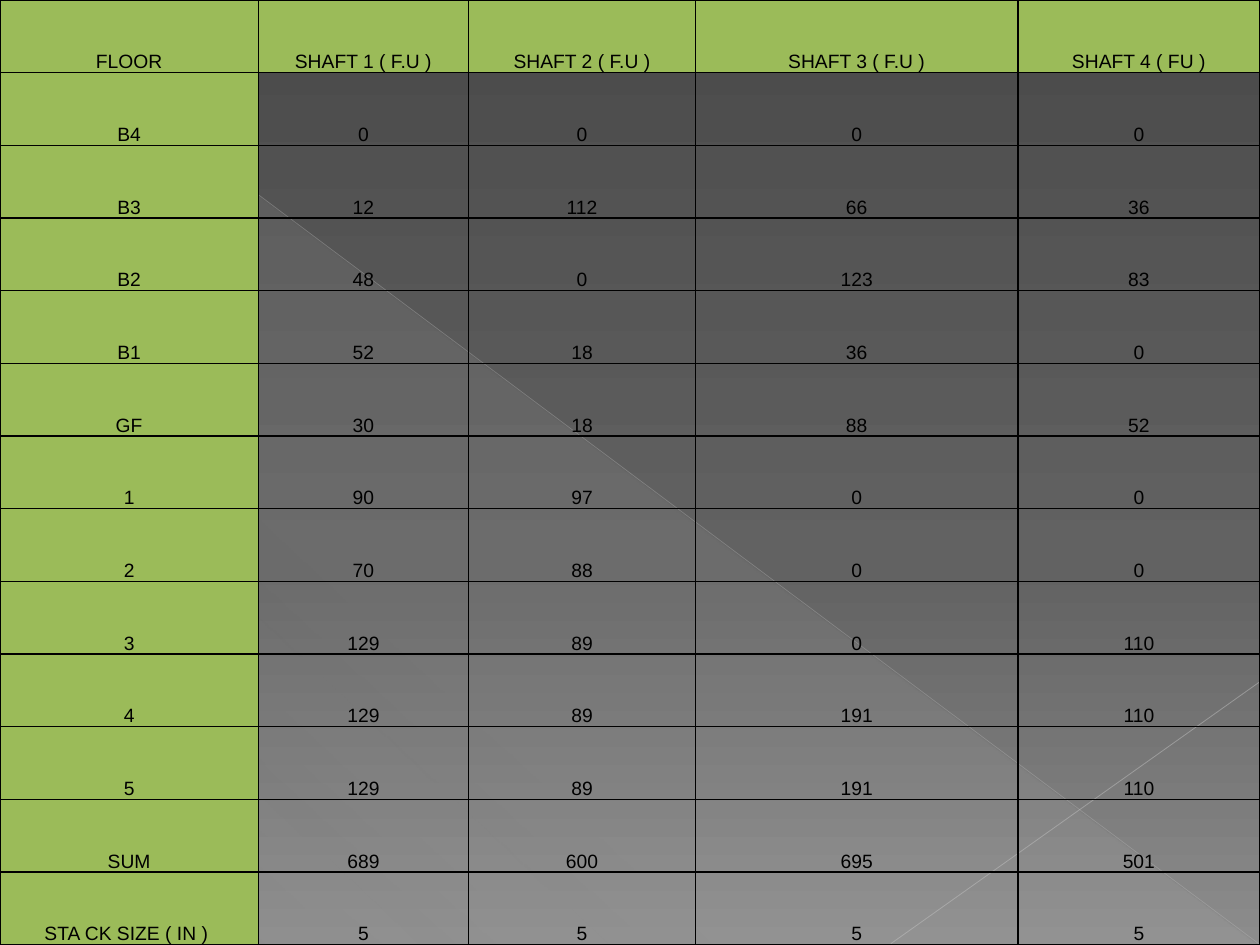
import dataclasses
import typing

import pptx
import pptx.dml.color
import pptx.enum.shapes
import pptx.enum.text
import pptx.oxml
import pptx.oxml.ns
import pptx.util

Inches = pptx.util.Inches
Pt = pptx.util.Pt
qn = pptx.oxml.ns.qn
NS = pptx.oxml.ns.nsdecls("a")


class Stop(typing.NamedTuple):
    position: int
    color: str
    opacity: int = 100


class Ray(typing.NamedTuple):
    start: tuple[float, float]
    end: tuple[float, float]
    color: str
    width: float
    opacity: int


@dataclasses.dataclass(frozen=True)
class Theme:
    font: str = "Arial"
    size: float = 11
    line_spacing: float = 1.15
    text: str = "000000"
    border: str = "000000"
    border_width: float = 1
    label_fill: str = "9BBB59"
    background: tuple[Stop, ...] = (
        Stop(0, "4A4A4A"), Stop(60, "626262"), Stop(100, "8C8C8C"))
    sheen: tuple[Stop, ...] = (
        Stop(0, "D2D2D2", 10), Stop(70, "D2D2D2", 8), Stop(100, "D2D2D2", 1))


THEME = Theme()
WIDTH, HEIGHT = 10, 7.5
RAYS = (
    Ray((0, 0.01), (9.99, 7.49), "BFBFBF", 0.39, 35),
    Ray((10, 5.41), (7.07, 7.49), "C6C6C6", 0.47, 45),
)
COLUMN_WIDTHS = (2.05, 1.67, 1.8, 2.56, 1.92)
ROWS = (
    ("FLOOR", "SHAFT 1 ( F.U )", "SHAFT 2 ( F.U )", "SHAFT 3 ( F.U )", "SHAFT 4 ( FU )"),
    ("B4", 0, 0, 0, 0),
    ("B3", 12, 112, 66, 36),
    ("B2", 48, 0, 123, 83),
    ("B1", 52, 18, 36, 0),
    ("GF", 30, 18, 88, 52),
    ("1", 90, 97, 0, 0),
    ("2", 70, 88, 0, 0),
    ("3", 129, 89, 0, 110),
    ("4", 129, 89, 191, 110),
    ("5", 129, 89, 191, 110),
    ("SUM", 689, 600, 695, 501),
    ("STA CK SIZE ( IN ) ", 5, 5, 5, 5),
)


def rgb(color: str) -> pptx.dml.color.RGBColor:
    return pptx.dml.color.RGBColor.from_string(color)


def set_gradient(fill, element, stops: tuple[Stop, ...], angle: int) -> None:
    fill.gradient()
    grad = next(element.iter(qn("a:gradFill")))
    stop_list = grad.find(qn("a:gsLst"))
    for child in list(stop_list):
        stop_list.remove(child)
    for stop in stops:
        stop_list.append(pptx.oxml.parse_xml(
            f'<a:gs {NS} pos="{stop.position * 1000}"><a:srgbClr val="{stop.color}">'
            f'<a:alpha val="{stop.opacity * 1000}"/></a:srgbClr></a:gs>'))
    grad.find(qn("a:lin")).set("ang", str(angle * 60000))


def add_sheen(s) -> None:
    sp = s.shapes.add_shape(
        pptx.enum.shapes.MSO_SHAPE.RIGHT_TRIANGLE,
        Inches(0.01), Inches(0.02), Inches(9.98), Inches(7.48))
    sp.shadow.inherit = False
    sp.line.fill.background()
    set_gradient(sp.fill, sp.element.spPr, THEME.sheen, 133)


def add_ray(s, ray: Ray) -> None:
    line = s.shapes.add_connector(
        pptx.enum.shapes.MSO_CONNECTOR.STRAIGHT,
        *(Inches(v) for v in ray.start + ray.end))
    line.line.color.rgb = rgb(ray.color)
    line.line.width = Pt(ray.width)
    color = next(line.element.spPr.iter(qn("a:srgbClr")))
    color.append(pptx.oxml.parse_xml(f'<a:alpha {NS} val="{ray.opacity * 1000}"/>'))
    line.element.spPr.append(pptx.oxml.parse_xml(f"<a:effectLst {NS}/>"))


def fill_cell(cell, text: str, is_label: bool) -> None:
    cell.margin_left = cell.margin_right = Inches(0.07)
    cell.margin_top = cell.margin_bottom = 0
    cell.vertical_anchor = pptx.enum.text.MSO_ANCHOR.BOTTOM
    tc_pr = cell._tc.get_or_add_tcPr()
    for side in ("lnL", "lnR", "lnT", "lnB"):
        tc_pr.append(pptx.oxml.parse_xml(
            f'<a:{side} {NS} w="{Pt(THEME.border_width)}"><a:solidFill>'
            f'<a:srgbClr val="{THEME.border}"/></a:solidFill></a:{side}>'))
    if is_label:
        cell.fill.solid()
        cell.fill.fore_color.rgb = rgb(THEME.label_fill)
    else:
        cell.fill.background()
    cell.text = text
    p = cell.text_frame.paragraphs[0]
    p.alignment = pptx.enum.text.PP_ALIGN.CENTER
    p.line_spacing = THEME.line_spacing
    p.font.name = THEME.font
    p.font.size = Pt(THEME.size)
    p.font.color.rgb = rgb(THEME.text)


def add_fixture_table(s) -> None:
    table = s.shapes.add_table(
        len(ROWS), len(COLUMN_WIDTHS), 0, 0, Inches(WIDTH), Inches(HEIGHT)).table
    table.first_row = table.horz_banding = False
    for column, width in zip(table.columns, COLUMN_WIDTHS):
        column.width = Inches(width)
    for i, values in enumerate(ROWS):
        for j, value in enumerate(values):
            fill_cell(table.cell(i, j), str(value), i == 0 or j == 0)


def main() -> None:
    prs = pptx.Presentation()
    prs.slide_width, prs.slide_height = Inches(WIDTH), Inches(HEIGHT)
    s = prs.slides.add_slide(prs.slide_layouts[6])
    set_gradient(s.background.fill, s.element, THEME.background, 90)
    add_sheen(s)
    for ray in RAYS:
        add_ray(s, ray)
    add_fixture_table(s)
    prs.save("out.pptx")


if __name__ == "__main__":
    main()
